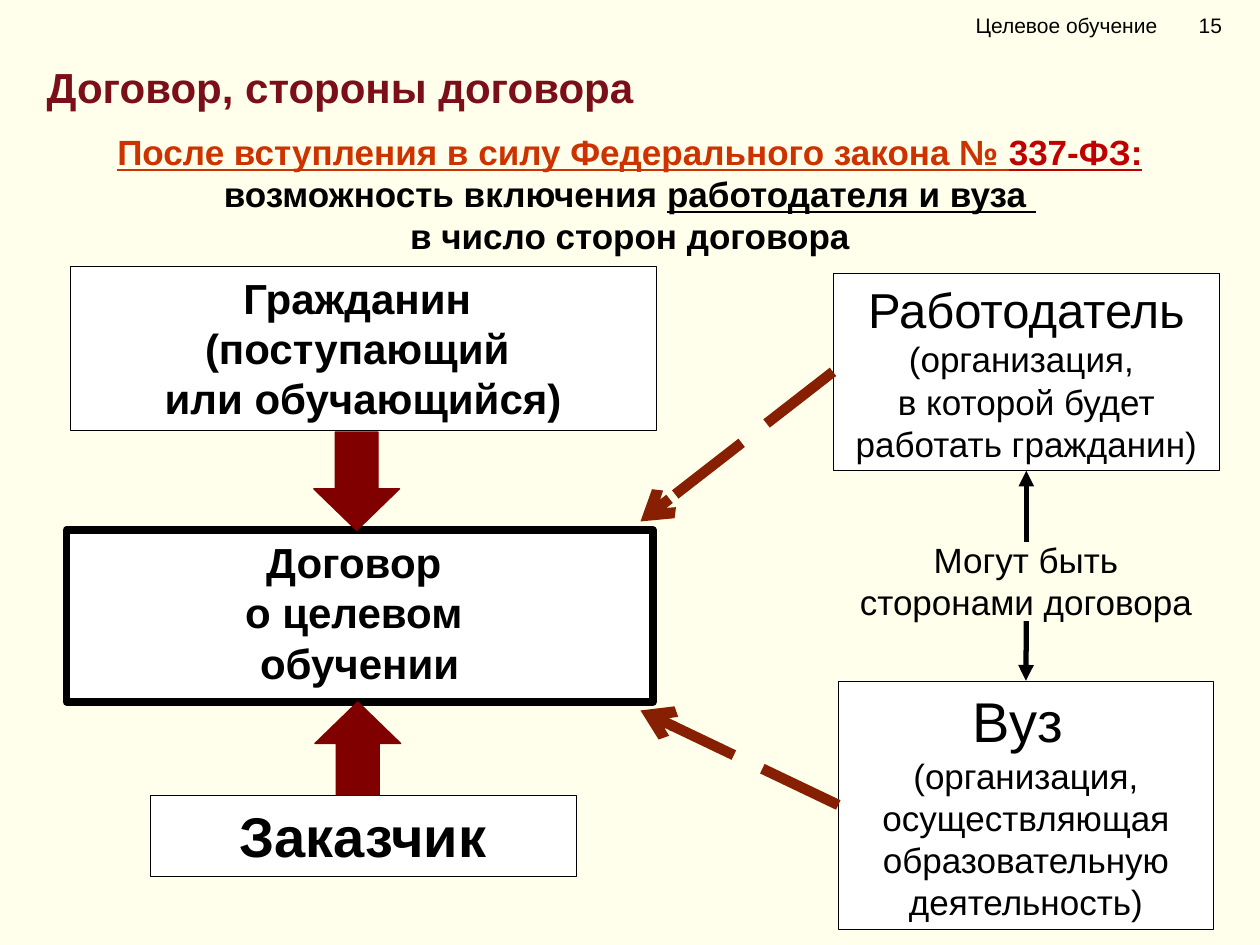
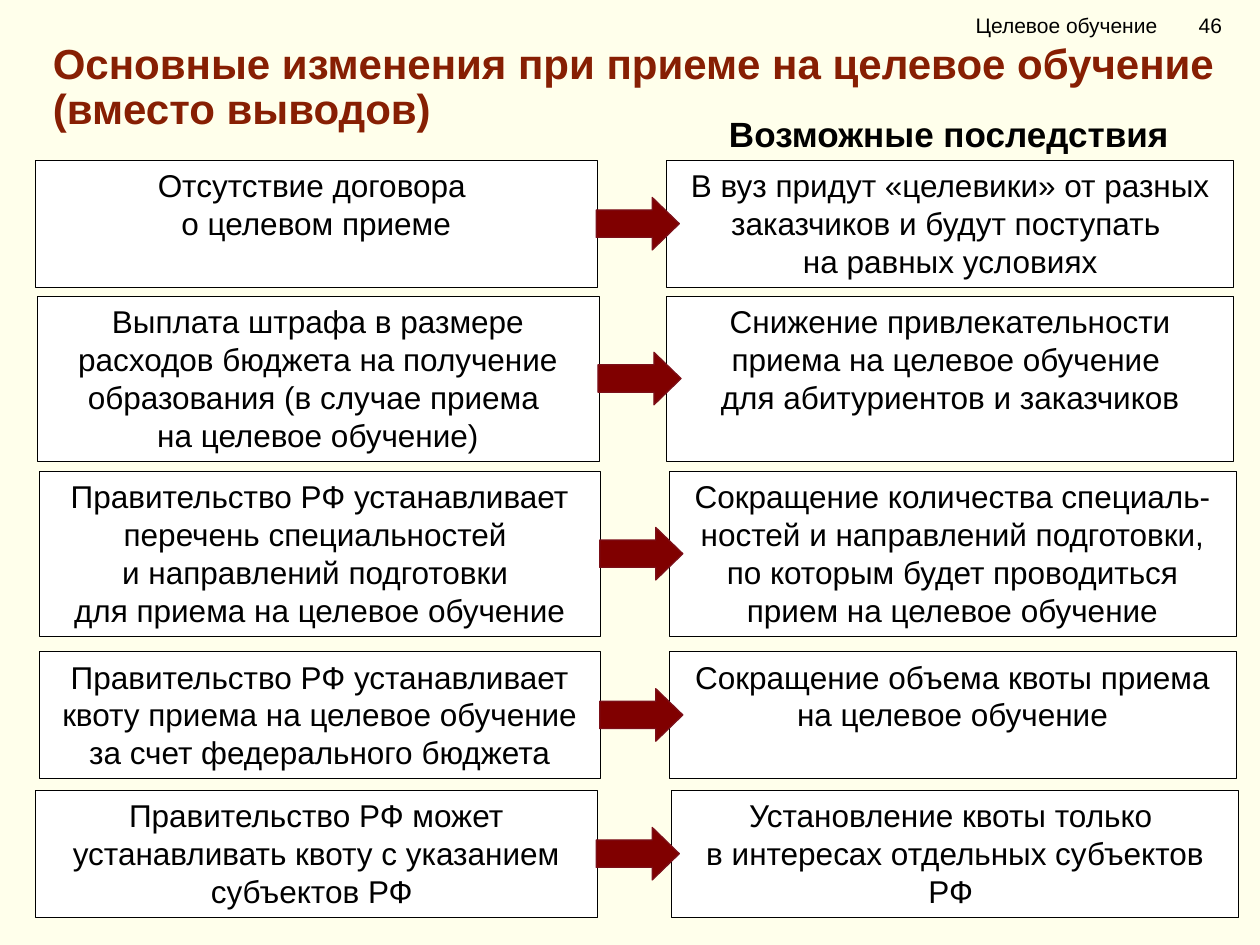
import pptx
import pptx.util
import pptx.dml.color
import pptx.enum.dml
import pptx.enum.shapes
import pptx.enum.text
import pptx.oxml.ns
from lxml import etree

Pt = pptx.util.Pt
SHAPE = pptx.enum.shapes.MSO_SHAPE
ALIGN = pptx.enum.text.PP_ALIGN
ANCHOR = pptx.enum.text.MSO_ANCHOR
qn = pptx.oxml.ns.qn

FONT = "Arial"
COLORS = {
    "page": "FFFFEB", "box": "FFFFFF", "ink": "000000", "arrow": "800000",
    "wine": "7B0F19", "brick": "871F03", "orange": "CC3300", "red": "C00000",
}
HEADER = "Целевое обучение"

CONTRACT_TITLE = ["Договор, стороны договора"]
CONTRACT_INTRO = [
    [("После вступления в силу Федерального закона № ", {"color": "orange", "underline": True}),
     ("337-ФЗ:", {"color": "red", "underline": True})],
    [("возможность включения ", {}), ("работодателя и вуза ", {"underline": True})],
    "в число сторон договора",
]
PARTIES = {
    "contract": {"at": (38, 303, 335, 98), "weight": 4.5, "size": 24, "bold": True,
                 "text": ["Договор ", "о целевом ", "обучении"]},
    "university": {"at": (479, 389, 214.5, 142), "size": 20,
                   "text": [[("Вуз ", {"size": 32})],
                            "(организация, осуществляющая образовательную деятельность)"]},
    "customer": {"at": (86, 454.5, 243, 46), "size": 32, "bold": True, "text": ["Заказчик"]},
    "citizen": {"at": (40, 152, 335, 94), "size": 24, "bold": True,
                "text": ["Гражданин ", "(поступающий ", "или обучающийся)"]},
    "employer": {"at": (476, 156, 221, 113), "size": 20,
                 "text": [[("Работодатель ", {"size": 28}), ("(организация, ", {})],
                          "в которой будет работать гражданин)"]},
}
BLOCK_ARROWS = [((175.7, 250.5, 56.2, 49), 90), ((177.8, 403.2, 53.3, 49), 270)]
JOIN_LINES = [("university", (366, 406)), ("employer", (366, 298))]
MAY_JOIN = ["Могут быть сторонами договора"]
MAY_JOIN_LINES = [("employer", 2, (586.5, 309.6)), ("university", 0, (586.5, 355))]

CHANGES_TITLE = ["Основные изменения при приеме на целевое обучение", "(вместо выводов)"]
CONSEQUENCES = ["Возможные последствия"]
LEFT_W, RIGHT_W = 321, 324
ARROW_W, ARROW_H = 47.5, 30
CHANGES = [
    {"top": 91.5, "height": 72.7, "lefts": (20.2, 381),
     "change": ["Отсутствие договора ", "о целевом приеме"],
     "result": ["В вуз придут «целевики» от разных заказчиков и будут поступать ",
                "на равных условиях"]},
    {"top": 169.2, "height": 94.3, "lefts": (21.2, 381),
     "change": ["Выплата штрафа в размере расходов бюджета на получение образования (в случае приема ",
                "на целевое обучение)"],
     "result": ["Снижение привлекательности приема на целевое обучение ",
                "для абитуриентов и заказчиков"]},
    {"top": 269.3, "height": 94.3, "lefts": (22.2, 382.3),
     "change": ["Правительство РФ устанавливает перечень специальностей ",
                "и направлений подготовки ", "для приема на целевое обучение"],
     "result": ["Сокращение количества специаль-ностей и направлений подготовки, "
                "по которым будет проводиться прием на целевое обучение"]},
    {"top": 372.2, "height": 72.7, "lefts": (22.2, 382.3),
     "change": ["Правительство РФ устанавливает квоту приема на целевое обучение",
                "за счет федерального бюджета"],
     "result": ["Сокращение объема квоты приема на целевое обучение"]},
    {"top": 451.5, "height": 72.7, "lefts": (20.2, 383.8),
     "change": ["Правительство РФ может устанавливать квоту с указанием субъектов РФ "],
     "result": ["Установление квоты только ", "в интересах отдельных субъектов РФ "]},
]


def rgb(name):
    return pptx.dml.color.RGBColor.from_string(COLORS[name])


def pts(*values):
    return [Pt(v) for v in values]


def write(sp, paragraphs, size, bold=False, color="ink", align=ALIGN.CENTER,
          anchor=ANCHOR.TOP, spacing=None):
    tf = sp.text_frame
    tf.word_wrap = True
    tf.auto_size = pptx.enum.text.MSO_AUTO_SIZE.NONE
    tf.vertical_anchor = anchor
    for i, runs in enumerate(paragraphs):
        p = tf.paragraphs[0] if i == 0 else tf.add_paragraph()
        p.alignment = align
        if spacing:
            p.line_spacing = spacing
        for text, style in [(runs, {})] if isinstance(runs, str) else runs:
            r = p.add_run()
            r.text = text
            r.font.name = FONT
            r.font.size = Pt(style.get("size", size))
            r.font.bold = bold
            r.font.underline = style.get("underline", False)
            r.font.color.rgb = rgb(style.get("color", color))
    return tf


def add_text(s, at, paragraphs, size, **style):
    return write(s.shapes.add_textbox(*pts(*at)), paragraphs, size, **style)


def add_shape(s, kind, at, fill, line, weight):
    sp = s.shapes.add_shape(kind, *pts(*at))
    sp.shadow.inherit = False
    sp.fill.solid()
    sp.fill.fore_color.rgb = rgb(fill)
    sp.line.color.rgb = rgb(line)
    sp.line.width = Pt(weight)
    return sp


def add_box(s, at, text, size, bold=False, weight=0.25):
    sp = add_shape(s, SHAPE.RECTANGLE, at, "box", "ink", weight)
    write(sp, text, size, bold=bold)
    return sp


def add_arrow(s, at, line, adjustments, rotation=0):
    sp = add_shape(s, SHAPE.RIGHT_ARROW, at, "arrow", line, 0.75)
    sp.adjustments[0], sp.adjustments[1] = adjustments
    sp.rotation = rotation


def add_line(s, start, end, color, weight, head, dash=None):
    cx = s.shapes.add_connector(pptx.enum.shapes.MSO_CONNECTOR.STRAIGHT, *pts(*start, *end))
    cx.line.color.rgb = rgb(color)
    cx.line.width = Pt(weight)
    if dash:
        cx.line.dash_style = dash
    spPr = cx.element.spPr
    etree.SubElement(spPr.find(qn("a:ln")), qn("a:tailEnd"), type=head)
    etree.SubElement(spPr, qn("a:effectLst"))
    return cx


def add_slide(prs, number, title, at, color, spacing=None):
    s = prs.slides.add_slide(prs.slide_layouts[5])
    sp = s.shapes.title
    sp.left, sp.top, sp.width, sp.height = pts(*at)
    write(sp, title, 24, bold=True, color=color, align=ALIGN.LEFT, spacing=spacing)
    tf = add_text(s, (536, 0, 184, 29), [f"{HEADER}\t{number}"], 12,
                  align=ALIGN.LEFT, anchor=ANCHOR.MIDDLE)
    tf.margin_left = Pt(21.5)
    tabs = etree.SubElement(tf.paragraphs[0]._p.get_or_add_pPr(), qn("a:tabLst"))
    etree.SubElement(tabs, qn("a:tab"), pos=str(Pt(127.5)), algn="l")
    return s


def build_contract(prs):
    s = add_slide(prs, 15, CONTRACT_TITLE, (19.5, 31.7, 669, 34), "wine")
    boxes = {name: add_box(s, **party) for name, party in PARTIES.items()}
    add_text(s, (0, 71.3, 720, 80), CONTRACT_INTRO, 20, bold=True)
    for at, rotation in BLOCK_ARROWS:
        add_arrow(s, at, "arrow", (0.5, 0.485), rotation)
    for name, end in JOIN_LINES:
        cx = add_line(s, end, end, "brick", 6, "arrow", pptx.enum.dml.MSO_LINE.LONG_DASH)
        cx.begin_connect(boxes[name], 1)
    add_text(s, (479, 304, 214.5, 55.5), MAY_JOIN, 20)
    for name, side, start in MAY_JOIN_LINES:
        cx = add_line(s, start, start, "ink", 3, "triangle")
        cx.end_connect(boxes[name], side)


def build_changes(prs):
    s = add_slide(prs, 46, CHANGES_TITLE, (23, 21, 683, 60), "brick", 0.9)
    add_text(s, (382.3, 60.5, 319.7, 31.5), CONSEQUENCES, 20, bold=True)
    for row in CHANGES:
        top, height = row["top"], row["height"]
        left, right = row["lefts"]
        add_box(s, (left, top, LEFT_W, height), row["change"], 18)
        add_box(s, (right, top, RIGHT_W, height), row["result"], 18)
        add_arrow(s, (left + LEFT_W - 0.5, top + (height - ARROW_H) / 2, ARROW_W, ARROW_H),
                  "wine", (0.52, 0.516))


def main():
    prs = pptx.Presentation()
    prs.slide_width, prs.slide_height = pts(720, 540)
    fill = prs.slide_master.background.fill
    fill.solid()
    fill.fore_color.rgb = rgb("page")
    build_contract(prs)
    build_changes(prs)
    prs.save("out.pptx")


if __name__ == "__main__":
    main()
